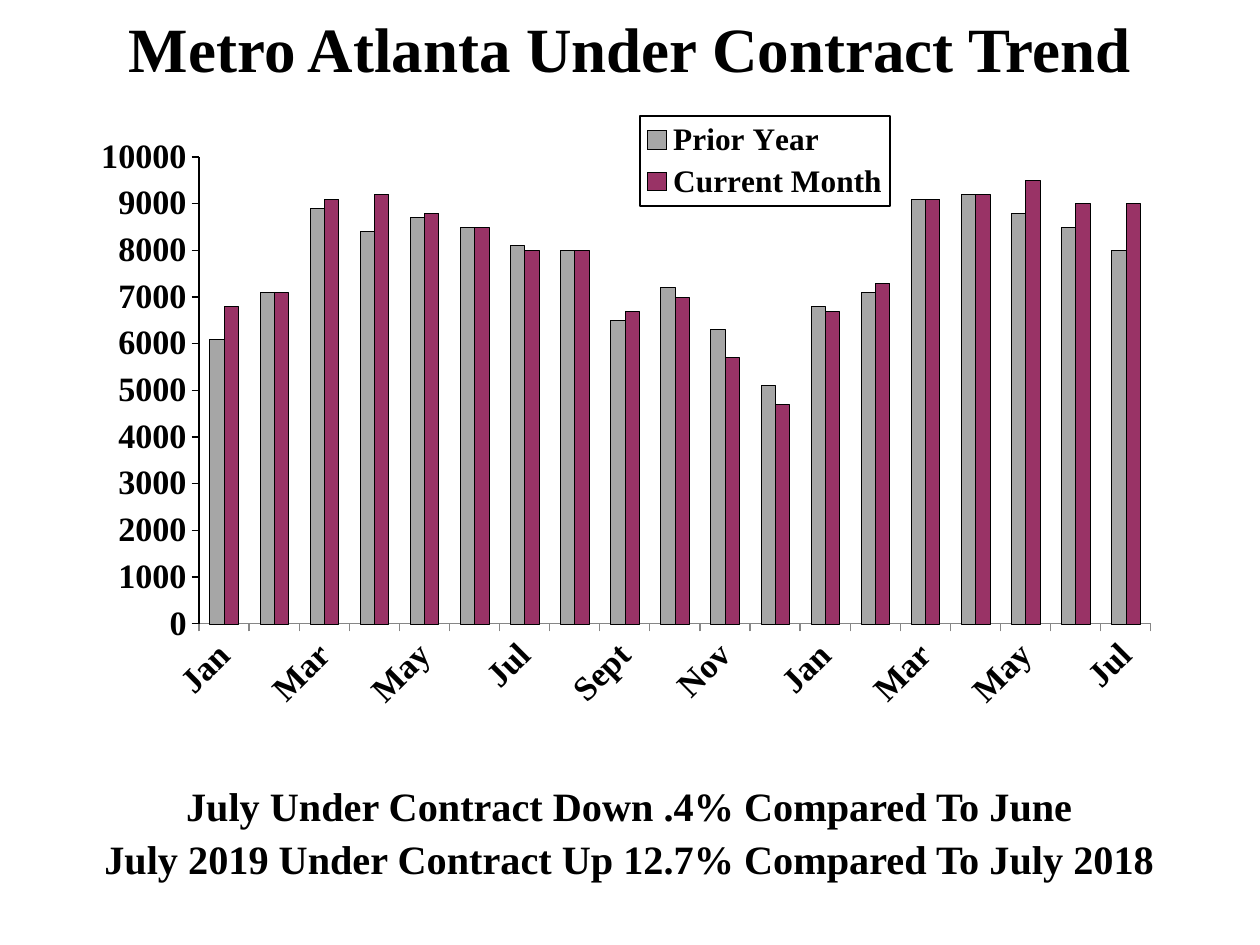
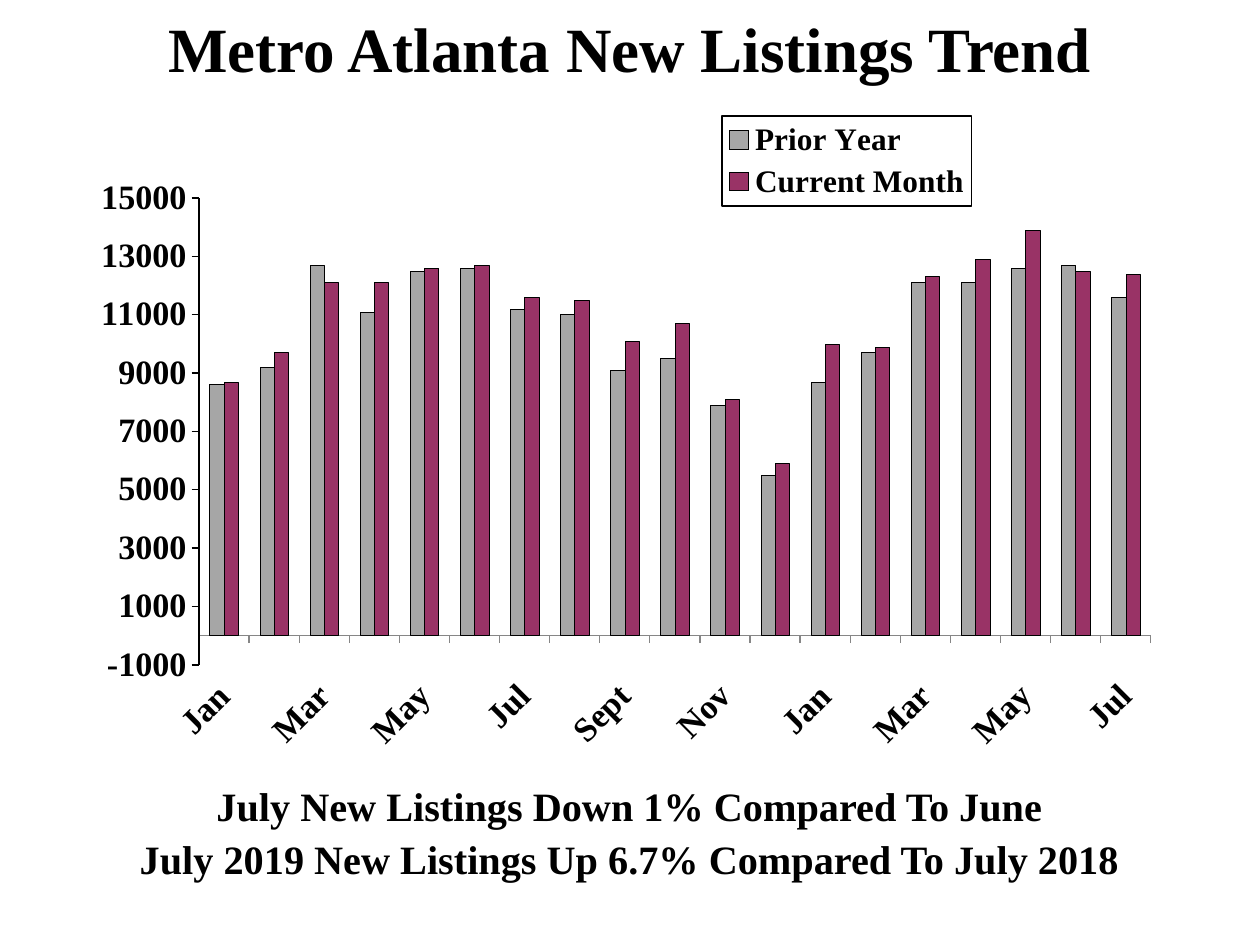
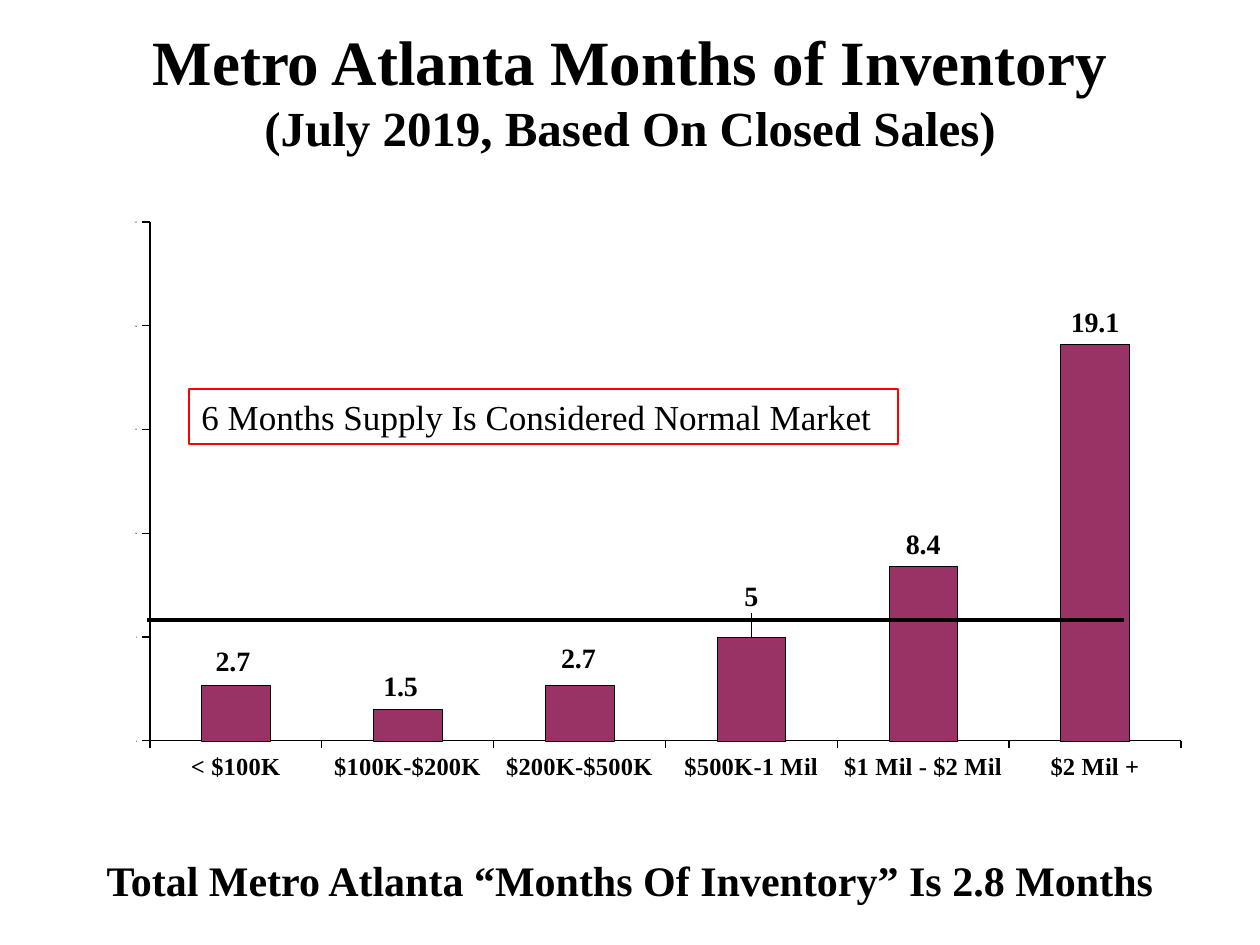
from dataclasses import dataclass

from lxml.etree import SubElement
from pptx import Presentation
from pptx.chart.data import CategoryChartData
from pptx.dml.color import RGBColor
from pptx.enum.chart import (XL_CHART_TYPE, XL_LABEL_POSITION, XL_LEGEND_POSITION,
                             XL_TICK_LABEL_POSITION, XL_TICK_MARK)
from pptx.enum.shapes import MSO_CONNECTOR, MSO_SHAPE
from pptx.enum.text import MSO_ANCHOR, MSO_AUTO_SIZE, PP_ALIGN
from pptx.oxml import parse_xml
from pptx.oxml.ns import nsdecls, qn
from pptx.util import Emu, Pt


@dataclass(frozen=True)
class Theme:
    font: str = "Times New Roman"
    ink: RGBColor = RGBColor(0x00, 0x00, 0x00)
    prior: RGBColor = RGBColor(0xA6, 0xA6, 0xA6)
    current: RGBColor = RGBColor(0x99, 0x33, 0x66)
    axis: RGBColor = RGBColor(0x86, 0x86, 0x86)
    alert: RGBColor = RGBColor(0xFF, 0x00, 0x00)
    title: float = 36
    subtitle: float = 28
    trend_caption: float = 23
    total_caption: float = 24
    note: float = 20
    trend_axis: float = 19.5
    legend: float = 17.9
    price_axis: float = 14
    value_label: float = 16
    tiny: float = 1.2


THEME = Theme()
SLIDE_SIZE = (1260, 945)
TITLE_BOX = (0, 21, 1260, 53)
LEGEND_SIZE = (250, 90)
MONTHS = ["Jan", "Feb", "Mar", "Apr", "May", "Jun", "Jul", "Aug", "Sept", "Oct", "Nov", "Dec"]
TREND_MONTHS = MONTHS + MONTHS[:7]

UNDER_CONTRACT = {
    "Prior Year": [6100, 7100, 8900, 8400, 8700, 8500, 8100, 8000, 6500, 7200,
                   6300, 5100, 6800, 7100, 9100, 9200, 8800, 8500, 8000],
    "Current Month": [6800, 7100, 9100, 9200, 8800, 8500, 8000, 8000, 6700, 7000,
                      5700, 4700, 6700, 7300, 9100, 9200, 9500, 9000, 9000],
}
NEW_LISTINGS = {
    "Prior Year": [8600, 9200, 12700, 11100, 12500, 12600, 11200, 11000, 9100, 9500,
                   7900, 5500, 8700, 9700, 12100, 12100, 12600, 12700, 11600],
    "Current Month": [8700, 9700, 12100, 12100, 12600, 12700, 11600, 11500, 10100, 10700,
                      8100, 5900, 10000, 9900, 12300, 12900, 13900, 12500, 12400],
}
PRICE_BANDS = ["< $100K", "$100K-$200K", "$200K-$500K", "$500K-1 Mil", "$1 Mil - $2 Mil", "$2 Mil +"]
INVENTORY = {"Series 1": [2.7, 1.5, 2.7, 5, 8.4, 19.1]}
LABEL_SHIFTS = [(-3, -2), (-7, -2), (-1, -5), (0, -19)]


def px(length):
    return Emu(round(length * 914400 / 126))


# Text
def style_font(font, size, bold=True):
    font.name = THEME.font
    font.size = Pt(size)
    font.bold = bold
    font.color.rgb = THEME.ink


def write(para, text, size, bold=True, align=PP_ALIGN.CENTER):
    para.alignment = align
    span = para.add_run()
    span.text = text
    style_font(span.font, size, bold)


def move(shape, box):
    shape.left, shape.top, shape.width, shape.height = map(px, box)


def add_title(page, box, text, subtitle=None):
    title = page.shapes.title
    move(title, box)
    frame = title.text_frame
    frame.auto_size = MSO_AUTO_SIZE.NONE
    frame.vertical_anchor = MSO_ANCHOR.MIDDLE
    frame.margin_top = frame.margin_bottom = 0
    para = frame.paragraphs[0]
    write(para, text, THEME.title)
    if subtitle:
        para.add_line_break()
        write(para, subtitle, THEME.subtitle)


def add_caption(page, box, lines, size):
    body = page.placeholders[1]
    move(body, box)
    frame = body.text_frame
    frame.auto_size = MSO_AUTO_SIZE.NONE
    frame.vertical_anchor = MSO_ANCHOR.TOP
    frame.margin_top, frame.margin_bottom = px(31), 0
    for number, line in enumerate(lines):
        para = frame.add_paragraph() if number else frame.paragraphs[0]
        para.line_spacing = 0.9
        para.space_before = Pt(5.5 if number else 0)
        properties = para._p.get_or_add_pPr()
        properties.set("marL", "0")
        properties.set("indent", "0")
        SubElement(properties, qn("a:buNone"))
        write(para, line, size)


# Chart parts
def set_layout(element, index, **values):
    """Give a chart part a manual layout, as its child number index."""
    for old in element.findall(qn("c:layout")):
        element.remove(old)
    layout = parse_xml(f"<c:layout {nsdecls('c')}><c:manualLayout/></c:layout>")
    for name, value in values.items():
        text = value if isinstance(value, str) else f"{value:.4f}"
        SubElement(layout[0], qn(f"c:{name}")).set("val", text)
    element.insert(index, layout)


def fractions(box, chart_box):
    width, height = chart_box[2:]
    return dict(xMode="edge", yMode="edge", x=box[0] / width, y=box[1] / height,
                w=box[2] / width, h=box[3] / height)


def style_axis(axis, size, color):
    axis.has_major_gridlines = False
    axis.major_tick_mark = XL_TICK_MARK.OUTSIDE
    axis.minor_tick_mark = XL_TICK_MARK.NONE
    axis.format.line.color.rgb = color
    axis.format.line.width = Pt(0.75)
    style_font(axis.tick_labels.font, size)


def add_columns(page, box, plot_box, categories, series, colors, scale, sizes, axis_color):
    data = CategoryChartData()
    data.categories = categories
    for name, values in series.items():
        data.add_series(name, values)
    chart = page.shapes.add_chart(XL_CHART_TYPE.COLUMN_CLUSTERED, *map(px, box), data).chart
    chart.has_title = False
    chart.has_legend = False
    category_size, value_size = sizes
    style_font(chart.font, value_size)
    style_axis(chart.category_axis, category_size, axis_color)
    chart.category_axis.tick_label_position = XL_TICK_LABEL_POSITION.LOW
    axis = chart.value_axis
    style_axis(axis, value_size, THEME.ink)
    axis.minimum_scale, axis.maximum_scale, axis.major_unit = scale
    plot = chart.plots[0]
    plot.gap_width, plot.overlap = 150, 0
    plot.vary_by_categories = False
    for bars, color in zip(plot.series, colors):
        bars.invert_if_negative = False
        bars.format.fill.solid()
        bars.format.fill.fore_color.rgb = color
        bars.format.line.color.rgb = THEME.ink
        bars.format.line.width = Pt(0.25)
    plot_area = chart._chartSpace.find(".//" + qn("c:plotArea"))
    set_layout(plot_area, 0, layoutTarget="inner", **fractions(plot_box, box))
    return chart


def slant_month_labels(axis):
    element = axis._element
    element.find(qn("c:txPr")).find(qn("a:bodyPr")).set("rot", "-2700000")
    skip = parse_xml(f'<c:tickLblSkip {nsdecls("c")} val="2"/>')
    element.find(qn("c:noMultiLvlLbl")).addprevious(skip)


def add_legend(chart, box, chart_box):
    chart.has_legend = True
    legend = chart.legend
    legend.position = XL_LEGEND_POSITION.RIGHT
    legend.include_in_layout = False
    style_font(legend.font, THEME.legend)
    element = legend._element
    set_layout(element, 1, **fractions(box, chart_box))
    element.find(qn("c:overlay")).addnext(parse_xml(
        f'<c:spPr {nsdecls("c", "a")}><a:solidFill><a:srgbClr val="FFFFFF"/></a:solidFill>'
        f'<a:ln w="9525"><a:solidFill><a:srgbClr val="{THEME.ink}"/></a:solidFill></a:ln></c:spPr>'))


def label_bars(bars, chart_box):
    labels = bars.data_labels
    labels.show_value = True
    labels.position = XL_LABEL_POSITION.OUTSIDE_END
    style_font(labels.font, THEME.value_label)
    for number in range(len(LABEL_SHIFTS)):
        label = bars.points[number].data_label
        style_font(label.font, THEME.value_label)
        label.position = XL_LABEL_POSITION.OUTSIDE_END
    elements = bars._element.findall(".//" + qn("c:dLbl"))
    for element, (across, down) in zip(elements, LABEL_SHIFTS):
        set_layout(element, 1, x=across / chart_box[2], y=down / chart_box[3])


# Inventory marks
def add_supply_line(page, start, end):
    line = page.shapes.add_connector(MSO_CONNECTOR.STRAIGHT, *map(px, start + end))
    line.line.color.rgb = THEME.ink
    line.line.width = Pt(2.25)
    SubElement(line._element.spPr, qn("a:effectLst"))


def add_note(page, box, text):
    note = page.shapes.add_shape(MSO_SHAPE.RECTANGLE, *map(px, box))
    note.shadow.inherit = False
    note.fill.background()
    note.line.color.rgb = THEME.alert
    note.line.width = Pt(0.75)
    frame = note.text_frame
    frame.word_wrap = True
    frame.auto_size = MSO_AUTO_SIZE.SHAPE_TO_FIT_TEXT
    frame.vertical_anchor = MSO_ANCHOR.TOP
    write(frame.paragraphs[0], text, THEME.note, bold=False, align=PP_ALIGN.LEFT)


# Slides
def new_page(deck):
    return deck.slides.add_slide(deck.slide_layouts[1])


def add_trend_slide(deck, title, series, captions, scale, top, plot_top, legend_at):
    page = new_page(deck)
    add_title(page, TITLE_BOX, title)
    add_caption(page, (0, 756, 1260, 73), captions, THEME.trend_caption)
    box = (78, top, 1104, 665)
    chart = add_columns(page, box, (121, plot_top, 952, 467), TREND_MONTHS, series,
                        (THEME.prior, THEME.current), scale,
                        (THEME.trend_axis, THEME.trend_axis), THEME.axis)
    slant_month_labels(chart.category_axis)
    add_legend(chart, legend_at + LEGEND_SIZE, box)


def add_inventory_slide(deck):
    page = new_page(deck)
    add_title(page, (0, 63, 1260, 53), "Metro Atlanta Months of Inventory",
              "(July 2019, Based On Closed Sales)")
    add_caption(page, (0, 829, 1260, 73),
                ["Total Metro Atlanta “Months Of Inventory” Is 2.8 Months"], THEME.total_caption)
    box = (62, 154, 1138, 713)
    chart = add_columns(page, box, (88, 68, 1031, 519), PRICE_BANDS, INVENTORY,
                        (THEME.current,), (0, 25, 5),
                        (THEME.price_axis, THEME.tiny), THEME.ink)
    label_bars(chart.plots[0].series[0], box)
    add_supply_line(page, (147, 620), (1124, 620))
    add_note(page, (189, 389, 709, 55), "6 Months Supply Is Considered Normal Market")


def main():
    deck = Presentation()
    deck.slide_width, deck.slide_height = map(px, SLIDE_SIZE)
    add_trend_slide(deck, "Metro Atlanta Under Contract Trend", UNDER_CONTRACT,
                    ["July Under Contract Down .4% Compared To June",
                     "July 2019 Under Contract Up 12.7% Compared To July 2018"],
                    scale=(0, 10000, 1000), top=94, plot_top=63, legend_at=(562, 22))
    add_trend_slide(deck, "Metro Atlanta New Listings Trend", NEW_LISTINGS,
                    ["July New Listings Down 1% Compared To June",
                     "July 2019 New Listings Up 6.7% Compared To July 2018"],
                    scale=(-1000, 15000, 2000), top=105, plot_top=93, legend_at=(644, 11))
    add_inventory_slide(deck)
    deck.save("out.pptx")


if __name__ == "__main__":
    main()
